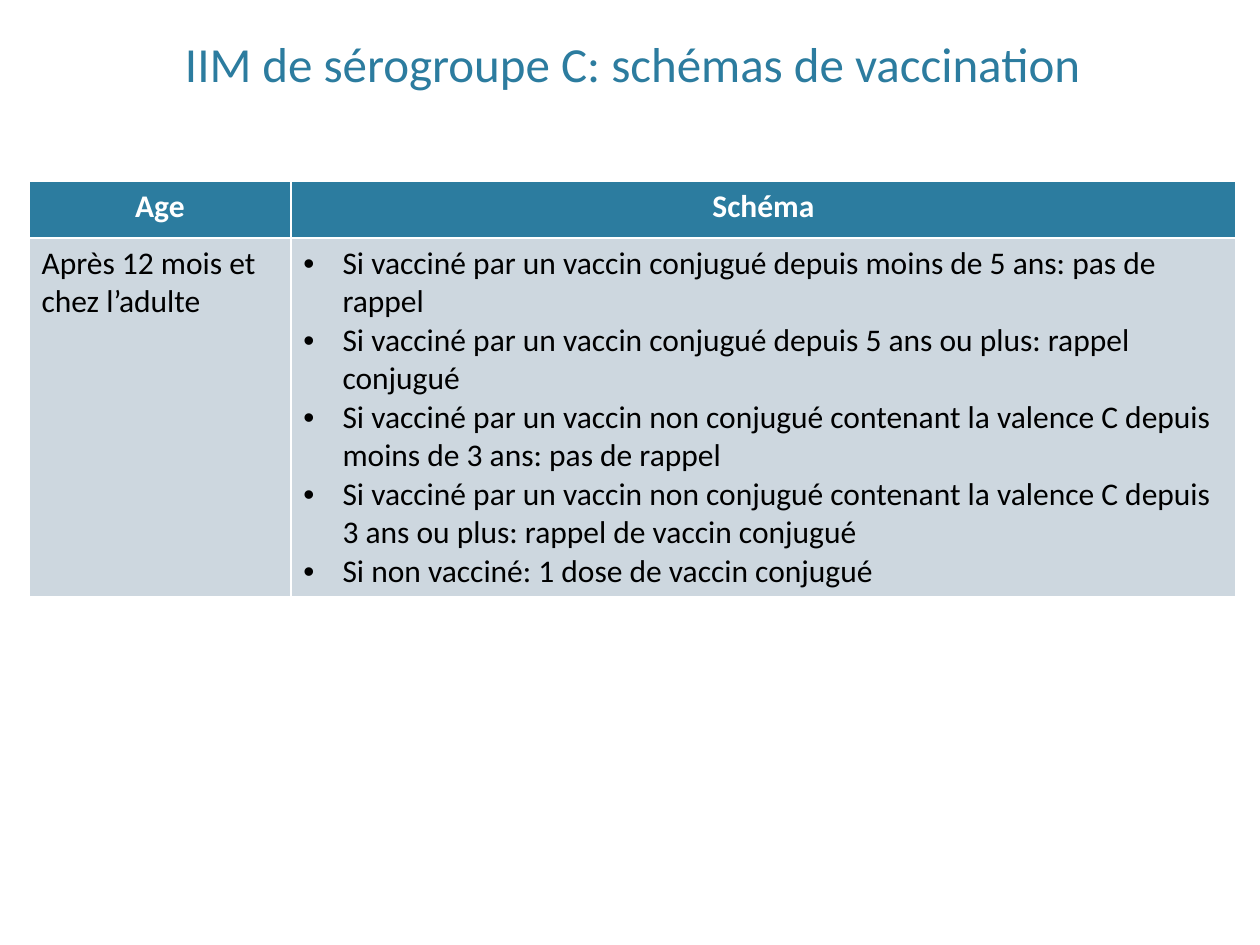
from dataclasses import dataclass
from pptx import Presentation
from pptx import util as u
from pptx.dml.color import RGBColor
from pptx.enum import text as t
from pptx.oxml.ns import qn
from lxml import etree

COLORS = {"teal": "2C7C9F", "pale": "CDD7DF", "white": "FFFFFF", "black": "000000"}
FONT = "Calibri"
WIDE, HIGH = u.Inches(10), u.Inches(7.5)
LEFT, SPAN = 0.023, 0.958  # shares of the slide's width
COLS = (0.217, 0.783)  # shares of the table's width
ROWS = (0.06, 0.373)  # shares of the slide's height
INDENT = u.Inches(0.31)


@dataclass
class Cell:
    lines: list[str]
    head: bool = False
    bullet: bool = False


GRID = [
    [Cell(["Age"], head=True), Cell(["Schéma"], head=True)],
    [
        Cell(["Après 12 mois et chez l’adulte"]),
        Cell([
            "Si vacciné par un vaccin conjugué depuis moins de 5 ans: pas de rappel",
            "Si vacciné par un vaccin conjugué depuis 5 ans ou plus: rappel conjugué",
            "Si vacciné par un vaccin non conjugué contenant la valence C depuis "
            "moins de 3 ans: pas de rappel",
            "Si vacciné par un vaccin non conjugué contenant la valence C depuis "
            "3 ans ou plus: rappel de vaccin conjugué",
            "Si non vacciné: 1 dose de vaccin conjugué",
        ], bullet=True),
    ],
]


def write(frame, lines: list[str], *, size: int = 18, color: str = "black",
          bold: bool = False, center: bool = False, bullet: bool = False) -> None:
    for i, line in enumerate(lines):
        para = frame.paragraphs[0] if i == 0 else frame.add_paragraph()
        para.alignment = t.PP_ALIGN.CENTER if center else t.PP_ALIGN.LEFT
        if bullet:
            props = para._p.get_or_add_pPr()
            props.set("marL", str(INDENT))
            props.set("indent", str(-INDENT))
            etree.SubElement(props, qn("a:buFont")).set("typeface", "Arial")
            etree.SubElement(props, qn("a:buChar")).set("char", "•")
        run = para.add_run()
        run.text = line
        run.font.name, run.font.size, run.font.bold = FONT, u.Pt(size), bold
        run.font.color.rgb = RGBColor.from_string(COLORS[color])


def place_title(slide, words: str) -> None:
    title = slide.shapes.title
    title.left, title.top = int(WIDE * LEFT), int(HIGH * 0.012)
    title.width, title.height = int(WIDE * SPAN), int(HIGH * 0.092)
    title.text_frame.vertical_anchor = t.MSO_ANCHOR.BOTTOM
    write(title.text_frame, [words], size=28, color="teal", center=True)


def draw_table(slide, grid: list[list[Cell]]) -> None:
    """The default table style supplies the white cell borders."""
    width = int(WIDE * SPAN)
    table = slide.shapes.add_table(
        len(grid), len(COLS), int(WIDE * LEFT), int(HIGH * 0.192),
        width, int(HIGH * sum(ROWS))).table
    table.horz_banding = False
    for col, share in zip(table.columns, COLS):
        col.width = int(width * share)
    for row, share, cells in zip(table.rows, ROWS, grid):
        row.height = int(HIGH * share)
        for box, cell in zip(row.cells, cells):
            box.fill.solid()
            box.fill.fore_color.rgb = RGBColor.from_string(
                COLORS["teal" if cell.head else "pale"])
            write(box.text_frame, cell.lines, bold=cell.head, center=cell.head,
                  color="white" if cell.head else "black", bullet=cell.bullet)


def main() -> None:
    deck = Presentation()
    deck.slide_width, deck.slide_height = WIDE, HIGH
    slide = deck.slides.add_slide(deck.slide_layouts[5])
    place_title(slide, "IIM de sérogroupe C: schémas de vaccination")
    draw_table(slide, GRID)
    deck.save("out.pptx")


if __name__ == "__main__":
    main()
